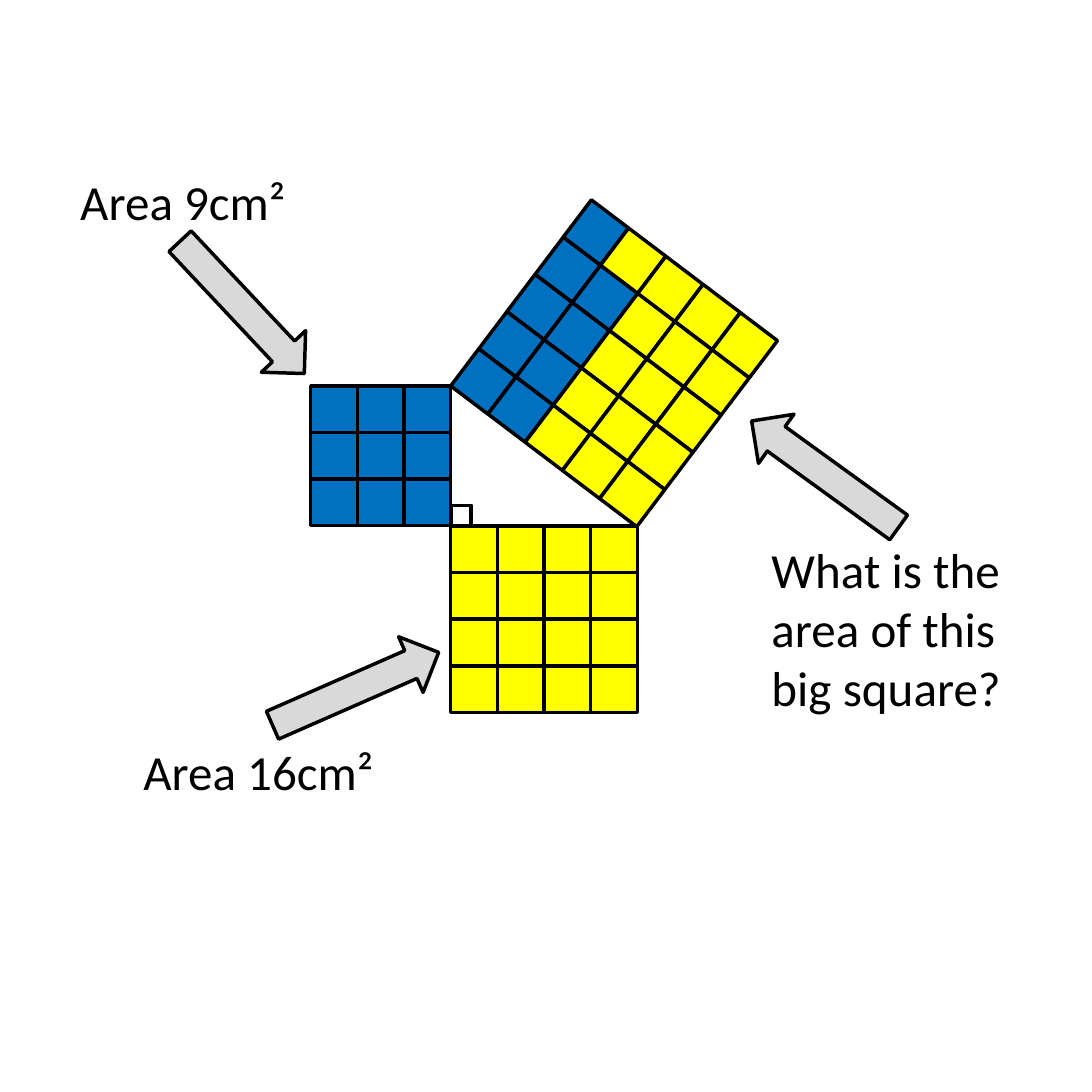
from dataclasses import dataclass
from math import cos, radians, sin

from pptx import Presentation
from pptx.dml.color import RGBColor
from pptx.enum.shapes import MSO_SHAPE
from pptx.enum.text import MSO_AUTO_SIZE
from pptx.util import Inches, Pt

RECT = MSO_SHAPE.RECTANGLE
ARROW = MSO_SHAPE.RIGHT_ARROW
GROW = MSO_AUTO_SIZE.SHAPE_TO_FIT_TEXT
BLANK = 6
SIDE = Inches(4.33)
CELLS = 23.4


@dataclass(frozen=True)
class Theme:
    ink: str = "000000"
    blue: str = "0070C0"
    yellow: str = "FFFF00"
    grey: str = "D9D9D9"
    font: str = "Calibri"
    size: int = 14
    line: int = 1


class Board:
    def __init__(self, deck, theme):
        self.theme = theme
        self.page = deck.slides.add_slide(deck.slide_layouts[BLANK])

    def cell(self, count):
        return round(count * SIDE / CELLS)

    def tint(self, name):
        return RGBColor.from_string(getattr(self.theme, name))

    def group(self):
        return self.page.shapes.add_group_shape().shapes

    def shape(self, home, kind, mid, size, hue=None, turn=0):
        x, y = mid
        wide, high = size
        item = home.add_shape(kind, self.cell(x - wide / 2), self.cell(y - high / 2),
                              self.cell(wide), self.cell(high))
        item.rotation = turn
        item.shadow.inherit = False
        if hue:
            item.fill.solid()
            item.fill.fore_color.rgb = self.tint(hue)
        else:
            item.fill.background()
        item.line.color.rgb = self.tint("ink")
        item.line.width = Pt(self.theme.line)

    def tiles(self, corner, count, blues, turn=0):
        home = self.group()
        x, y = corner
        run, rise = cos(radians(turn)), sin(radians(turn))
        for spot in range(count * count):
            row, col = divmod(spot, count)
            along, down = col + 0.5, row + 0.5
            mid = x + along * run - down * rise, y + along * rise + down * run
            hue = "blue" if spot < blues else "yellow"
            self.shape(home, RECT, mid, (1, 1), hue, turn)

    def arrow(self, mid, turn):
        self.shape(self.page.shapes, ARROW, mid, (3.89, 1.3), "grey", turn)

    def label(self, text, left, top, wide, high, wrap=False):
        box = self.page.shapes.add_textbox(*map(self.cell, (left, top, wide, high)))
        frame = box.text_frame
        frame.text = text
        font = frame.paragraphs[0].runs[0].font
        font.color.rgb = self.tint("ink")
        looks = {
            frame: {"word_wrap": wrap, "auto_size": GROW},
            font: {"name": self.theme.font, "size": Pt(self.theme.size)},
        }
        for part, values in looks.items():
            for key, value in values.items():
                setattr(part, key, value)


def main():
    deck = Presentation()
    deck.slide_width = deck.slide_height = SIDE
    board = Board(deck, Theme())

    x, y = 9.66, 11.27
    short, long, slant = 3, 4, 5
    blues = short * short
    board.tiles((x - short, y - short), short, blues)
    board.tiles((x, y), long, 0)
    board.tiles((x, y - short), slant, blues, 307.1)
    mark = 0.44
    board.shape(board.page.shapes, RECT, (x + mark / 2, y - mark / 2), (mark, mark))

    board.label("Area 9cm²", 1.19, 3.41, 5.51, 1.84)
    board.label("Area 16cm²", 2.54, 15.62, 6.05, 1.84)
    board.label("What is the area of this big square?", 16, 11.3, 6.7, 4.38, True)

    board.arrow((17.68, 10.16), 215.9)
    board.arrow((7.62, 14.76), 336.3)
    board.arrow((5.19, 6.59), 46.8)
    deck.save("out.pptx")


if __name__ == "__main__":
    main()
